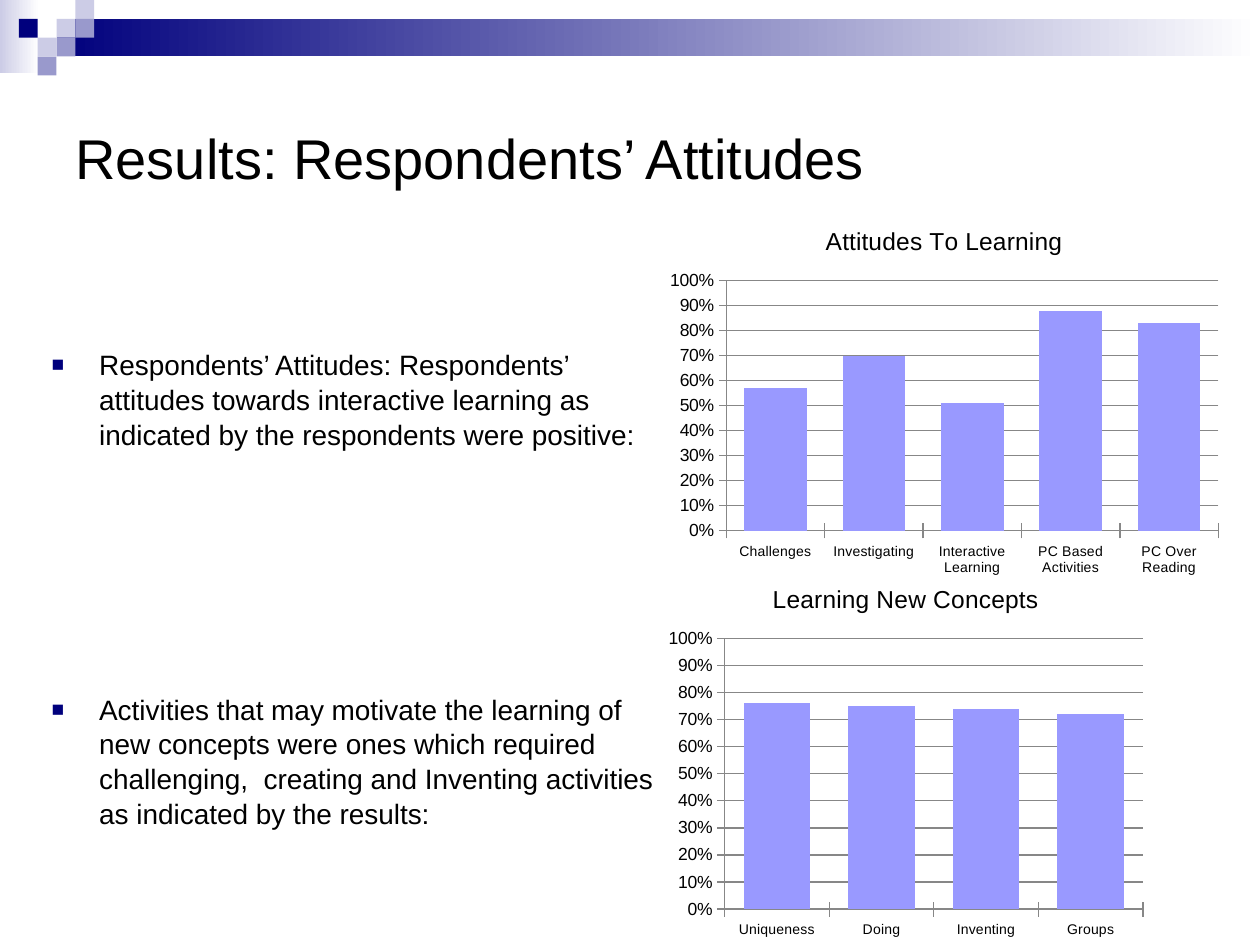
from lxml.etree import SubElement
from pptx import Presentation
from pptx.chart.data import CategoryChartData
from pptx.dml.color import RGBColor
from pptx.enum.chart import XL_CHART_TYPE as ChartType, XL_TICK_MARK as TickMark
from pptx.enum.shapes import MSO_SHAPE as Shape
from pptx.enum.text import MSO_ANCHOR as Anchor
from pptx.oxml.ns import qn
from pptx.util import Cm, Pt

NAVY = RGBColor(0x00, 0x00, 0x7D)
LAVENDER = RGBColor(0xCC, 0xCC, 0xE6)
VIOLET = RGBColor(0x99, 0x99, 0xCC)
BAR = RGBColor(0x99, 0x99, 0xFF)
GRAY = RGBColor(0x87, 0x87, 0x87)
BLACK = RGBColor(0, 0, 0)
WHITE = RGBColor(0xFF, 0xFF, 0xFF)
FONT = "Arial"

presentation = Presentation()
presentation.slide_width = Cm(25.4)
presentation.slide_height = Cm(19.05)
slide = presentation.slides.add_slide(presentation.slide_layouts[6])


def add_block(left, top, width, height, color, fade=False):
    shape = slide.shapes.add_shape(
        Shape.RECTANGLE, Cm(left), Cm(top), Cm(width), Cm(height))
    shape.shadow.inherit = False
    shape.line.fill.background()
    if fade:
        shape.fill.gradient()
        shape.fill.gradient_angle = 0
        for stop, stop_color in zip(shape.fill.gradient_stops, (color, WHITE)):
            stop.color.rgb = stop_color
    else:
        shape.fill.solid()
        shape.fill.fore_color.rgb = color


def style_font(font, size):
    font.name = FONT
    font.size = Pt(size)
    font.bold = False
    font.color.rgb = BLACK


# Header: two fading bands and a mosaic of squares on a grid
SQUARE = 0.38
add_block(0, 0, 0.79, 1.48, LAVENDER, fade=True)
add_block(1.14, SQUARE, 24.26, 2 * SQUARE, NAVY, fade=True)
mosaic = [
    (3, 1, LAVENDER), (4, 0, LAVENDER), (4, 1, VIOLET), (2, 2, LAVENDER),
    (1, 1, NAVY), (3, 2, VIOLET), (2, 3, VIOLET),
]
for column, row, color in mosaic:
    add_block(column * SQUARE, row * SQUARE, SQUARE, SQUARE, color)

# Title
title_box = slide.shapes.add_textbox(Cm(1.27), Cm(1.27), Cm(22.86), Cm(3.81))
title_frame = title_box.text_frame
title_frame.word_wrap = True
title_frame.vertical_anchor = Anchor.MIDDLE
title_frame.text = "Results: Respondents’ Attitudes"
style_font(title_frame.paragraphs[0].runs[0].font, 32)

# Bulleted findings, each beside its chart
body_box = slide.shapes.add_textbox(Cm(0.79), Cm(5.28), Cm(13.11), Cm(10.8))
body_frame = body_box.text_frame
body_frame.word_wrap = True
body_frame.margin_top = Cm(1.7)
body_frame.text = (
    "Respondents’ Attitudes: Respondents’ attitudes towards interactive "
    "learning as indicated by the respondents were positive:\n"
    "Activities that may motivate the learning of new concepts were ones "
    "which required  challenging,  creating and Inventing activities as "
    "indicated by the results:")
body_frame.paragraphs[1].space_before = Pt(137)
for paragraph in body_frame.paragraphs:
    paragraph.line_spacing = 1.04
    style_font(paragraph.runs[0].font, 16)
    properties = paragraph.runs[0]._r.getparent().get_or_add_pPr()
    properties.set("marL", str(Cm(0.96)))
    properties.set("indent", str(-Cm(0.96)))
    bullet_color = SubElement(properties, qn("a:buClr"))
    SubElement(bullet_color, qn("a:srgbClr"), val=str(NAVY))
    SubElement(properties, qn("a:buSzPct"), val="75000")
    SubElement(properties, qn("a:buFont"), typeface=FONT)
    SubElement(properties, qn("a:buChar"), char="■")

# Charts: title, top, width, height, values by category
charts = [
    ("Attitudes To Learning", 4.17, 11.51, 7.57,
     {"Challenges": 0.57, "Investigating": 0.7, "Interactive Learning": 0.51,
      "PC Based Activities": 0.88, "PC Over Reading": 0.83}),
    ("Learning New Concepts", 11.38, 9.96, 7.67,
     {"Uniqueness": 0.76, "Doing": 0.75, "Inventing": 0.74, "Groups": 0.72}),
]
for title, top, width, height, values in charts:
    data = CategoryChartData(number_format="0%")
    data.categories = list(values)
    data.add_series("Series 1", list(values.values()))
    chart = slide.shapes.add_chart(
        ChartType.COLUMN_CLUSTERED, Cm(13.28), Cm(top), Cm(width), Cm(height),
        data).chart
    style_font(chart.font, 10)
    chart.has_legend = False
    chart.has_title = True
    chart.chart_title.include_in_layout = False
    chart.chart_title.text_frame.text = title
    style_font(chart.chart_title.text_frame.paragraphs[0].runs[0].font, 14)

    plot = chart.plots[0]
    plot.gap_width = 57
    plot.overlap = -27
    plot.vary_by_categories = False
    bar_fill = plot.series[0].format.fill
    bar_fill.solid()
    bar_fill.fore_color.rgb = BAR

    value_axis = chart.value_axis
    value_axis.minimum_scale = 0
    value_axis.maximum_scale = 1
    value_axis.major_unit = 0.1
    value_axis.has_major_gridlines = True
    value_axis.tick_labels.number_format = "0%"
    value_axis.tick_labels.number_format_is_linked = False
    value_axis.major_gridlines.format.line.color.rgb = GRAY
    value_axis.major_gridlines.format.line.width = Pt(0.75)
    for axis, size in ((chart.category_axis, 8), (value_axis, 10)):
        axis.major_tick_mark = TickMark.CROSS
        axis.minor_tick_mark = TickMark.NONE
        axis.format.line.color.rgb = GRAY
        axis.format.line.width = Pt(0.75)
        style_font(axis.tick_labels.font, size)

presentation.save("out.pptx")
